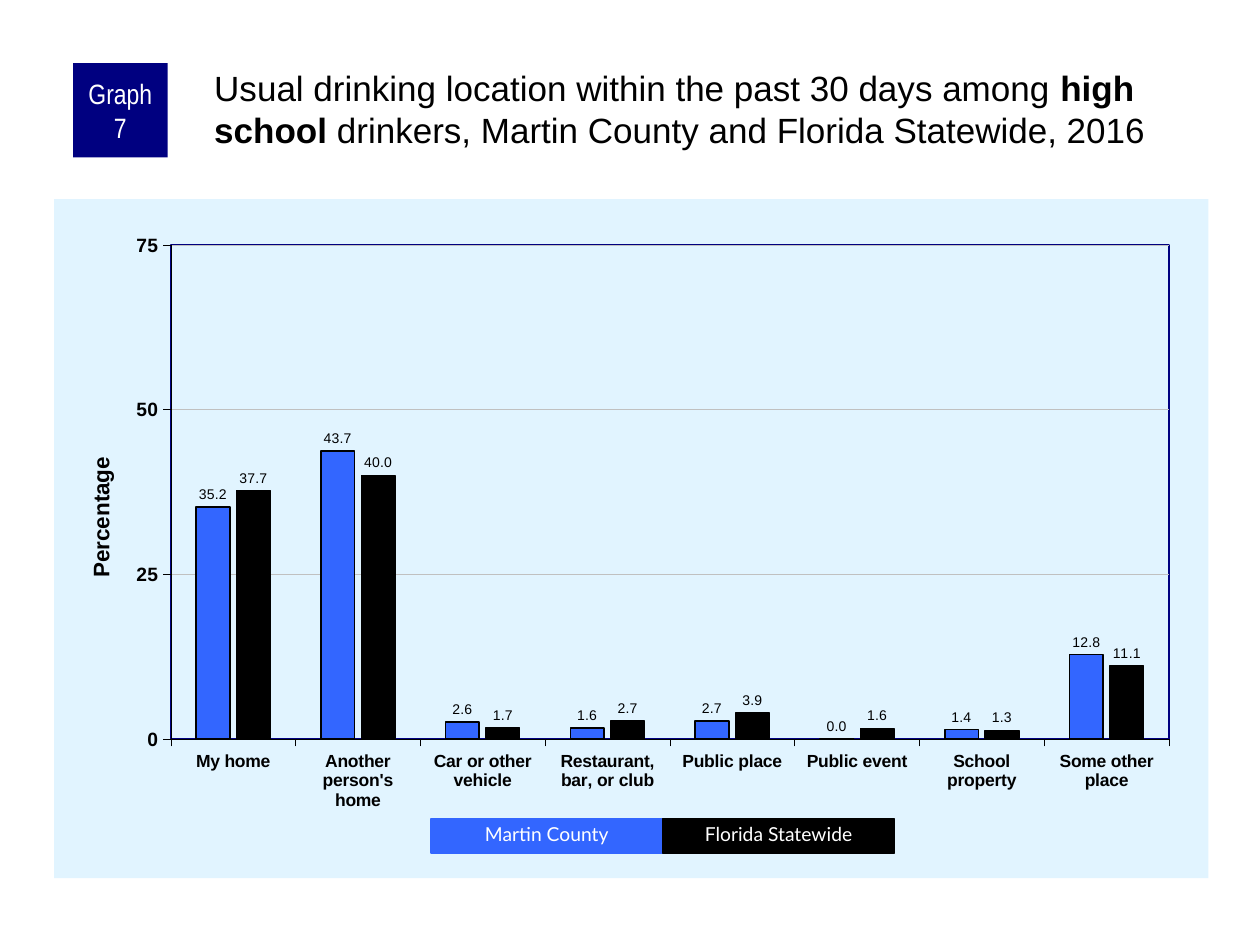
from lxml.etree import fromstring
from pptx import Presentation
from pptx.chart.data import CategoryChartData
from pptx.dml.color import RGBColor
from pptx.enum.chart import XL_CHART_TYPE as ChartType
from pptx.enum.chart import XL_LABEL_POSITION as LabelPosition
from pptx.enum.chart import XL_TICK_MARK as TickMark
from pptx.enum.shapes import MSO_SHAPE as Shape
from pptx.enum.text import MSO_ANCHOR as Anchor
from pptx.enum.text import MSO_AUTO_SIZE as AutoSize
from pptx.enum.text import PP_ALIGN as Align
from pptx.oxml.ns import nsdecls, qn
from pptx.util import Inches, Pt

NAVY = RGBColor(0x00, 0x00, 0x80)
BLUE = RGBColor(0x33, 0x66, 0xFF)
PALE_BLUE = RGBColor(0xE1, 0xF4, 0xFF)
GREY = RGBColor(0xC0, 0xC0, 0xC0)
BLACK = RGBColor(0x00, 0x00, 0x00)
WHITE = RGBColor(0xFF, 0xFF, 0xFF)

LOCATIONS = [
    "My home", "Another person's home", "Car or other vehicle",
    "Restaurant, bar, or club", "Public place", "Public event",
    "School property", "Some other place",
]
REGIONS = [
    ("Martin County", BLUE, 1, "0.0",
     [35.2, 43.7, 2.6, 1.6, 2.7, 0, 1.4, 12.8]),
    ("Florida Statewide", BLACK, 0.75, "#,##0.0",
     [37.7, 40, 1.7, 2.7, 3.9, 1.6, 1.3, 11.1]),
]
KEY_LEFT, KEY_TOP, KEY_WIDTH, KEY_HEIGHT = 3.42, 6.5, 1.84, 0.27


def set_font(font, size, color, name="Arial", bold=False):
    font.size = Pt(size)
    font.color.rgb = color
    font.name = name
    font.bold = bold


def set_line(line, color, width):
    line.color.rgb = color
    line.width = Pt(width)


def set_insets(frame, left, top, right, bottom):
    frame.margin_left, frame.margin_top = Inches(left), Inches(top)
    frame.margin_right, frame.margin_bottom = Inches(right), Inches(bottom)


def manual_layout(x, y, width=None, height=None):
    inner = '<c:layoutTarget val="inner"/>' if width else ""
    sizes = f'<c:w val="{width}"/><c:h val="{height}"/>' if width else ""
    return fromstring(
        f'<c:layout {nsdecls("c")}><c:manualLayout>{inner}'
        '<c:xMode val="edge"/><c:yMode val="edge"/>'
        f'<c:x val="{x}"/><c:y val="{y}"/>{sizes}'
        "</c:manualLayout></c:layout>")


def area_style(fill, line):
    return fromstring(
        f'<c:spPr {nsdecls("c", "a")}>{fill}'
        f'<a:ln w="12700">{line}</a:ln></c:spPr>')


def solid(color):
    return f'<a:solidFill><a:srgbClr val="{color}"/></a:solidFill>'


def remove_layout(parent):
    for layout in parent.findall(qn("c:layout")):
        parent.remove(layout)


def style_axis(axis, size):
    axis.major_tick_mark = TickMark.OUTSIDE
    axis.minor_tick_mark = TickMark.NONE
    set_font(axis.tick_labels.font, size, BLACK, bold=True)
    set_line(axis.format.line, BLACK, 0.25)


def style_percentage_axis(axis):
    style_axis(axis, 11)
    axis.minimum_scale, axis.maximum_scale, axis.major_unit = 0, 75, 25
    axis.tick_labels.number_format = "0"
    axis.tick_labels.number_format_is_linked = False
    set_line(axis.major_gridlines.format.line, GREY, 0.25)
    heading = axis.axis_title
    caption = heading.text_frame.paragraphs[0]
    caption.text = "Percentage"
    set_font(caption.font, 12.75, BLACK, bold=True)
    title = caption._p.getparent().getparent().getparent()
    remove_layout(title)
    title.find(qn("c:tx")).addnext(manual_layout(0.025, 0.374))


def style_series(series, color, outline, number_format):
    series.format.fill.solid()
    series.format.fill.fore_color.rgb = color
    series.invert_if_negative = False
    set_line(series.format.line, BLACK, outline)
    labels = series.data_labels
    labels.show_value = True
    labels.position = LabelPosition.OUTSIDE_END
    labels.number_format = number_format
    labels.number_format_is_linked = False
    set_font(labels.font, 8, BLACK)


def add_location_chart(slide):
    data = CategoryChartData()
    data.categories = LOCATIONS
    for name, _, _, _, shares in REGIONS:
        data.add_series(name, shares)
    chart = slide.shapes.add_chart(
        ChartType.COLUMN_CLUSTERED, Inches(0.43), Inches(1.58),
        Inches(9.16), Inches(5.39), data).chart
    chart.has_title = False
    chart.has_legend = False
    set_font(chart.font, 11.5, BLACK)

    columns = chart.plots[0]
    columns.gap_width, columns.overlap = 150, -20
    columns.vary_by_categories = False
    for series, (_, color, outline, number_format, _) in zip(columns.series, REGIONS):
        style_series(series, color, outline, number_format)
    style_axis(chart.category_axis, 10)
    style_percentage_axis(chart.value_axis)

    chart_root = chart._chartSpace.find(qn("c:chart"))
    chart_root.addnext(area_style(solid(PALE_BLUE), "<a:noFill/>"))
    plot_area = chart_root.find(qn("c:plotArea"))
    remove_layout(plot_area)
    plot_area.insert(0, manual_layout(0.101, 0.068, 0.865, 0.727))
    plot_area.append(area_style("<a:noFill/>", solid(NAVY)))


def add_box(slide, left, top, width, height, color, text, size, font_name):
    box = slide.shapes.add_shape(
        Shape.RECTANGLE, Inches(left), Inches(top), Inches(width), Inches(height))
    box.shadow.inherit = False
    box.fill.solid()
    box.fill.fore_color.rgb = color
    box.line.fill.background()
    frame = box.text_frame
    frame.word_wrap = True
    frame.vertical_anchor = Anchor.MIDDLE
    label = frame.paragraphs[0]
    label.text = text
    label.alignment = Align.CENTER
    set_font(label.font, size, WHITE, font_name)
    return box


def add_graph_number(slide):
    badge = add_box(slide, 0.58, 0.5, 0.75, 0.75, NAVY, "Graph 7", 16, "Arial Narrow")
    set_insets(badge.text_frame, 0.05, 0, 0.05, 0)


def add_heading(slide):
    frame = slide.shapes.add_textbox(
        Inches(1.67), Inches(0.5), Inches(7.92), Inches(0.83)).text_frame
    frame.word_wrap = True
    set_insets(frame, 0.03, 0.03, 0, 0)
    heading = frame.paragraphs[0]
    set_font(heading.font, 20, BLACK)
    for text, bold in [
        ("Usual drinking location within the past 30 days among ", False),
        ("high school", True),
        (" drinkers, Martin County and Florida Statewide, 2016", False),
    ]:
        part = heading.add_run()
        part.text = text
        set_font(part.font, 20, BLACK, bold=bold)


def add_key(slide):
    for column, (name, color, *_) in enumerate(REGIONS):
        entry = add_box(slide, KEY_LEFT + column * KEY_WIDTH, KEY_TOP,
                        KEY_WIDTH, KEY_HEIGHT, color, name, 11, "Lato")
        set_line(entry.line, color, 0.75)
        entry.text_frame.auto_size = AutoSize.SHAPE_TO_FIT_TEXT
        entry.text_frame.vertical_anchor = Anchor.TOP
        entry.text_frame.paragraphs[0].line_spacing = 0.9


def main():
    deck = Presentation()
    deck.slide_width, deck.slide_height = Inches(10), Inches(7.5)
    slide = deck.slides.add_slide(deck.slide_layouts[6])
    add_location_chart(slide)
    add_graph_number(slide)
    add_heading(slide)
    add_key(slide)
    deck.save("out.pptx")


if __name__ == "__main__":
    main()
